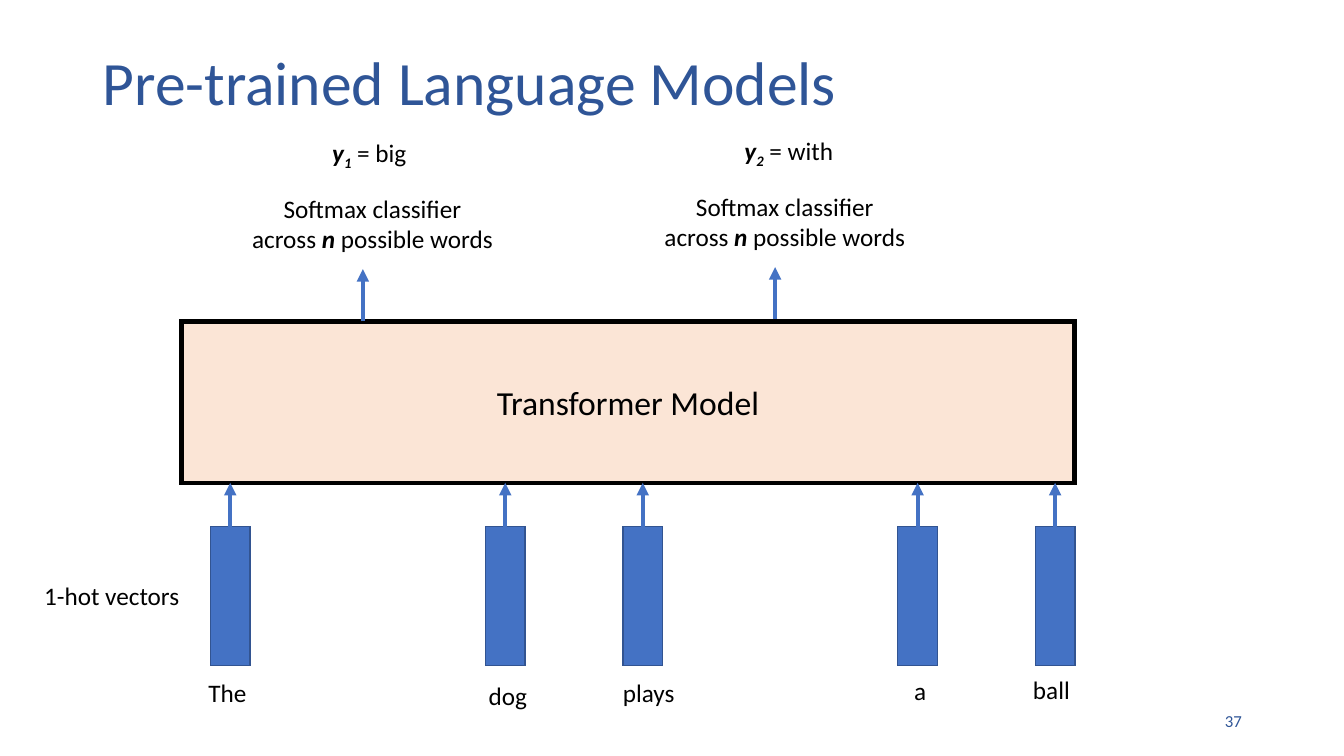
from lxml import etree
from pptx import Presentation
from pptx.dml.color import RGBColor
from pptx.enum.shapes import MSO_CONNECTOR, MSO_SHAPE
from pptx.enum.text import MSO_ANCHOR as ANCHOR, MSO_AUTO_SIZE as AUTO, PP_ALIGN as ALIGN
from pptx.oxml.ns import qn
from pptx.util import Pt

FONT = "Calibri"
BLACK, NAVY, BLUE, EDGE, PEACH = "000000", "2F5597", "4472C4", "325491", "FBE5D6"
FIRST_X, PITCH, VECTOR_W = 150.3, 98.2, 28.4
VECTOR_TOP, VECTOR_H = 376, 99.4
MODEL_TOP, MODEL_H = 229.7, 115.2

# slot, word, left, top and width of its label
WORDS = [
    (0, "The", 141.8, 480.2, 46.1),
    (2, "dog", 342, 482.4, 46.8),
    (3, "plays", 437.8, 480.2, 56.2),
    (5, "a", 645.8, 478.8, 27.4),
    (6, "ball", 730.8, 478.1, 45.4),
]


def rgb(value):
    return RGBColor.from_string(value)


def add_runs(p, runs, size, color):
    """Each run is a text and a style: "" plain, "bi" bold italic, "sub" bold italic subscript."""
    for text, style in runs:
        r = p.add_run()
        r.text = text
        r.font.name = FONT
        r.font.size = Pt(size)
        r.font.color.rgb = rgb(color)
        if style:
            r.font.bold = r.font.italic = True
        if style == "sub":
            r._r.get_or_add_rPr().set("baseline", "-25000")


def add_text(slide, box, paragraphs, size=18, color=BLACK, align=ALIGN.LEFT):
    """A one-line-per-paragraph label that grows with its text."""
    sp = slide.shapes.add_textbox(*map(Pt, box))
    tf = sp.text_frame
    tf.word_wrap = False
    tf.auto_size = AUTO.SHAPE_TO_FIT_TEXT
    for i, runs in enumerate(paragraphs):
        p = tf.paragraphs[0] if i == 0 else tf.add_paragraph()
        p.alignment = align
        add_runs(p, runs, size, color)
    return tf


def add_frame_text(slide, box, text, size, align, spacing=1.0):
    """Wrapped text, vertically centred in a fixed frame."""
    tf = add_text(slide, box, [[(text, "")]], size, NAVY, align)
    tf.word_wrap = True
    tf.auto_size = AUTO.NONE
    tf.vertical_anchor = ANCHOR.MIDDLE
    tf.paragraphs[0].line_spacing = spacing


def add_box(slide, box, fill, line, width):
    """A filled rectangle with sharp outline corners."""
    sp = slide.shapes.add_shape(MSO_SHAPE.RECTANGLE, *map(Pt, box))
    sp.shadow.inherit = False
    sp.fill.solid()
    sp.fill.fore_color.rgb = rgb(fill)
    sp.line.color.rgb = rgb(line)
    sp.line.width = Pt(width)
    etree.SubElement(sp.line._get_or_add_ln(), qn("a:miter"), lim="800000")
    return sp


def add_up_arrow(slide, x, bottom, top):
    cx = slide.shapes.add_connector(MSO_CONNECTOR.STRAIGHT, Pt(x), Pt(bottom), Pt(x), Pt(top))
    cx.line.color.rgb = rgb(BLUE)
    cx.line.width = Pt(3)
    etree.SubElement(cx.line._get_or_add_ln(), qn("a:tailEnd"), type="triangle")
    etree.SubElement(cx._element.spPr, qn("a:effectLst"))


def add_model(slide):
    sp = add_box(slide, (129.6, MODEL_TOP, 637.9, MODEL_H), PEACH, BLACK, 3)
    tf = sp.text_frame
    tf.vertical_anchor = ANCHOR.MIDDLE
    p = tf.paragraphs[0]
    p.alignment = ALIGN.CENTER
    add_runs(p, [("Transformer Model", "")], 24, BLACK)


def add_input(slide, slot, word, label_x, label_y, label_w):
    x = FIRST_X + slot * PITCH
    add_box(slide, (x, VECTOR_TOP, VECTOR_W, VECTOR_H), BLUE, EDGE, 1)
    add_up_arrow(slide, x + VECTOR_W / 2, 382.3, MODEL_TOP + MODEL_H)
    add_text(slide, (label_x, label_y, label_w, 29), [[(word, "")]])


def add_output(slide, x, top, index, word, width):
    """Predicted word, classifier note and arrow, placed about the arrow's x."""
    add_text(slide, (x - 29, top, width, 29),
             [[("y", "bi"), (index, "sub"), (f" = {word}", "")]])
    add_text(slide, (x - 87.1, top + 40.3, 187.9, 51),
             [[("Softmax classifier", "")],
              [("across ", ""), ("n", "bi"), (" possible words", "")]],
             align=ALIGN.CENTER)
    add_up_arrow(slide, x, top + 135.2, top + 97.9)


def main():
    prs = Presentation()
    prs.slide_width, prs.slide_height = Pt(960), Pt(540)
    slide = prs.slides.add_slide(prs.slide_layouts[6])

    add_frame_text(slide, (66.2, 28.8, 828, 64.8), "Pre-trained Language Models",
                   44, ALIGN.LEFT, 0.9)
    add_model(slide)
    for word in WORDS:
        add_input(slide, *word)
    add_text(slide, (24.5, 411.1, 112.3, 29), [[("1-hot vectors", "")]])
    add_output(slide, 259.2, 94.3, "1", "big", 73.4)
    add_output(slide, 553.7, 92.9, "2", "with", 83.5)
    add_frame_text(slide, (678.2, 500.4, 216, 28.8), "37", 12, ALIGN.RIGHT)

    prs.save("out.pptx")


if __name__ == "__main__":
    main()
